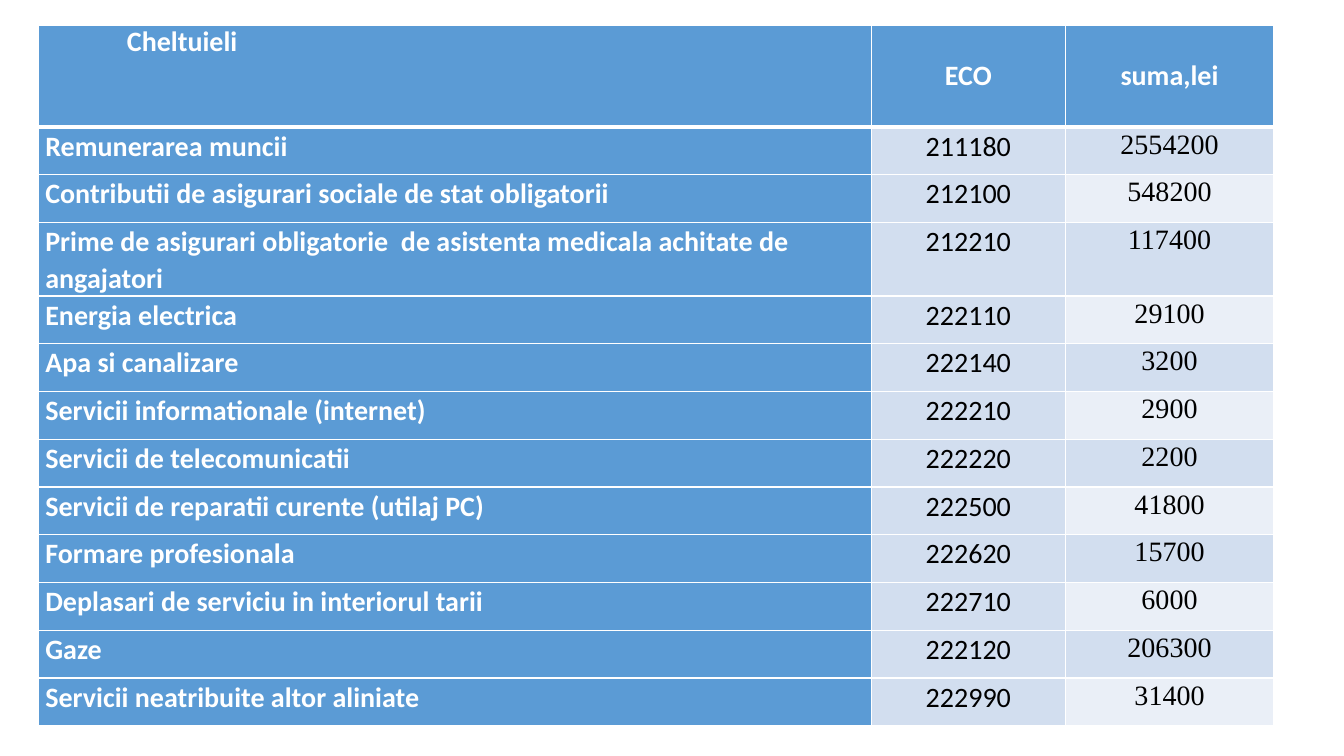
import pptx
import pptx.dml.color
import pptx.enum.text
import pptx.oxml.ns
import pptx.util
from lxml import etree

Inches = pptx.util.Inches
Pt = pptx.util.Pt
ALIGN = pptx.enum.text.PP_ALIGN
ANCHOR = pptx.enum.text.MSO_ANCHOR

COLORS = {
    "white": "FFFFFF",
    "black": "000000",
    "blue": "5B9BD5",
    "band": "D2DEEF",
    "light": "EAEFF7",
}

HEADINGS = ["Cheltuieli", "ECO", "suma,lei"]
EXPENSES = [
    ("Remunerarea muncii", "211180", "2554200"),
    ("Contributii de asigurari sociale de stat obligatorii", "212100", "548200"),
    ("Prime de asigurari obligatorie  de asistenta medicala achitate de angajatori",
     "212210", "117400"),
    ("Energia electrica", "222110", "29100"),
    ("Apa si canalizare", "222140", "3200"),
    ("Servicii informationale (internet)", "222210", "2900"),
    ("Servicii de telecomunicatii", "222220", "2200"),
    ("Servicii de reparatii curente (utilaj PC)", "222500", "41800"),
    ("Formare profesionala", "222620", "15700"),
    ("Deplasari de serviciu in interiorul tarii", "222710", "6000"),
    ("Gaze", "222120", "206300"),
    ("Servicii neatribuite altor aliniate", "222990", "31400"),
]

COLUMN_WIDTHS = [8.26, 1.93, 2.06]
TABLE_HEIGHT = 6.95
HEADER_HEIGHT = 1.01
WRAPPED_ROW, WRAPPED_HEIGHT = 3, 0.73
# The rows with a single line share the remaining height equally
LINE_HEIGHT = (TABLE_HEIGHT - HEADER_HEIGHT - WRAPPED_HEIGHT) / (len(EXPENSES) - 1)


def add_border(cell, side, points):
    properties = cell._tc.get_or_add_tcPr()
    line = etree.SubElement(properties, pptx.oxml.ns.qn("a:ln" + side), w=str(Pt(points)))
    fill = etree.SubElement(line, pptx.oxml.ns.qn("a:solidFill"))
    etree.SubElement(fill, pptx.oxml.ns.qn("a:srgbClr"), val=COLORS["white"])


def style_cell(cell, fill, top=1, bottom=1):
    for side, points in (("L", 1), ("R", 1), ("T", top), ("B", bottom)):
        add_border(cell, side, points)
    cell.fill.solid()
    cell.fill.fore_color.rgb = pptx.dml.color.RGBColor.from_string(COLORS[fill])
    cell.margin_left = cell.margin_right = Inches(0.07)
    cell.margin_top = cell.margin_bottom = 0


def write_cell(cell, text, color, bold, align, spacing=1.07, font="Calibri"):
    paragraph = cell.text_frame.paragraphs[0]
    paragraph.alignment = align
    paragraph.line_spacing = spacing
    run = paragraph.add_run()
    run.text = text
    run.font.name = font
    run.font.size = Pt(20)
    run.font.bold = bold
    run.font.color.rgb = pptx.dml.color.RGBColor.from_string(COLORS[color])


def fill_header(table):
    for column, heading in enumerate(HEADINGS):
        cell = table.cell(0, column)
        style_cell(cell, "blue", bottom=3)
        align = ALIGN.CENTER if column else ALIGN.LEFT
        write_cell(cell, heading, "white", True, align, spacing=1.0)
        cell.vertical_anchor = ANCHOR.MIDDLE if column else ANCHOR.TOP
    # The first heading is indented
    indented = table.cell(0, 0).text_frame.paragraphs[0]
    indented._p.get_or_add_pPr().set("marL", str(Inches(0.81)))


def fill_expense(table, row, expense):
    name, code, amount = (table.cell(row, column) for column in range(3))
    top = 3 if row == 1 else 1
    style_cell(name, "blue", top)
    style_cell(code, "band", top)
    style_cell(amount, "band" if row % 2 else "light", top)
    write_cell(name, expense[0], "white", True, ALIGN.LEFT)
    write_cell(code, expense[1], "black", False, ALIGN.CENTER)
    write_cell(amount, expense[2], "black", False, ALIGN.CENTER, font="Times New Roman")


def add_expense_table(slide):
    table = slide.shapes.add_table(
        len(EXPENSES) + 1, len(HEADINGS), Inches(0.38), Inches(0.25),
        Inches(sum(COLUMN_WIDTHS)), Inches(TABLE_HEIGHT)).table
    table.horz_banding = False
    for column, width in zip(table.columns, COLUMN_WIDTHS):
        column.width = Inches(width)
    for row in table.rows:
        row.height = Inches(LINE_HEIGHT)
    table.rows[0].height = Inches(HEADER_HEIGHT)
    table.rows[WRAPPED_ROW].height = Inches(WRAPPED_HEIGHT)

    fill_header(table)
    for row, expense in enumerate(EXPENSES, start=1):
        fill_expense(table, row, expense)


def main():
    presentation = pptx.Presentation()
    presentation.slide_width = Inches(13.33)
    presentation.slide_height = Inches(7.5)
    slide = presentation.slides.add_slide(presentation.slide_layouts[6])
    add_expense_table(slide)
    presentation.save("out.pptx")


if __name__ == "__main__":
    main()
